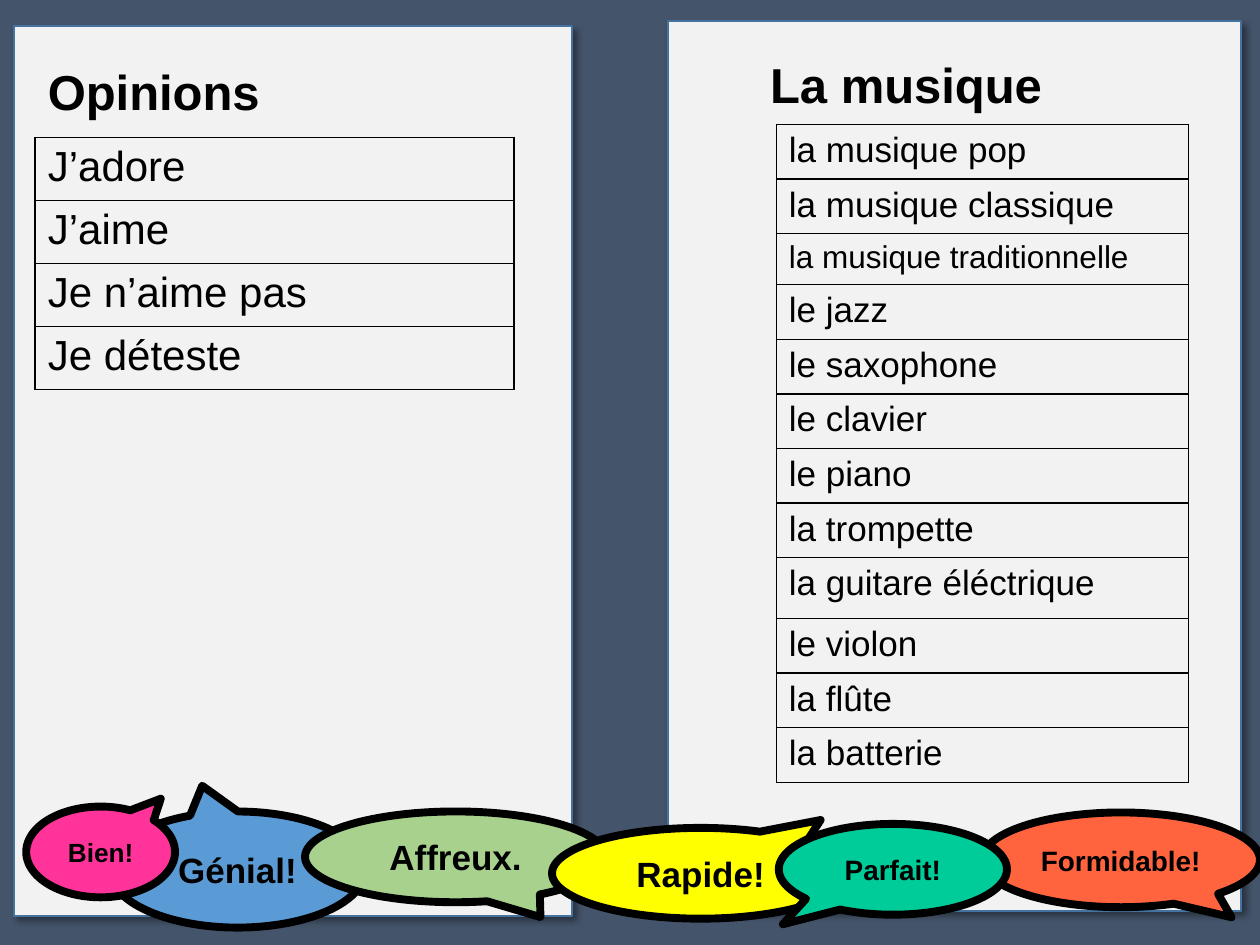
from lxml import etree
from pptx import Presentation
from pptx.dml.color import RGBColor
from pptx.enum.shapes import MSO_SHAPE
from pptx.enum.text import MSO_ANCHOR, MSO_AUTO_SIZE, PP_ALIGN
from pptx.oxml import parse_xml
from pptx.oxml.ns import nsdecls, qn
from pptx.util import Cm, Pt

RECTANGLE = MSO_SHAPE.RECTANGLE
CALLOUT = MSO_SHAPE.OVAL_CALLOUT
TOP, MIDDLE = MSO_ANCHOR.TOP, MSO_ANCHOR.MIDDLE
LEFT, CENTER = PP_ALIGN.LEFT, PP_ALIGN.CENTER
NO_AUTOFIT = MSO_AUTO_SIZE.NONE

FONT = "Arial"
COLORS = {
    "background": "44546A", "panel": "F2F2F2", "panel_line": "43739E",
    "ink": "000000", "blue": "5B9BD5", "pink": "FF3399", "green": "A9D18E",
    "yellow": "FFFF00", "orange": "FF643F", "teal": "00CC99",
}

PANELS = [(0.28, 0.53, 11.25, 17.93), (13.46, 0.43, 11.56, 17.93)]
HEADINGS = [
    (0, "Opinions", (0.71, 1.12, 10.82, 1.45)),
    (1, "La musique", (15.27, 0.97, 10.82, 1.45)),
]
OPINIONS = ["J’adore", "J’aime", "Je n’aime pas", "Je déteste"]
MUSIC = [
    "la musique pop", "la musique classique", "la musique traditionnelle",
    "le jazz", "le saxophone", "le clavier", "le piano", "la trompette",
    "la guitare éléctrique", "le violon", "la flûte", "la batterie",
]
TABLES = [
    {"words": OPINIONS, "place": (0.71, 2.77, 9.65), "row": 1.27, "size": 24,
     "exceptions": {}},
    {"words": MUSIC, "place": (15.65, 2.51, 8.31), "row": 1.1, "size": 20,
     "exceptions": {"la musique traditionnelle": (1.03, 18),
                    "la guitare éléctrique": (1.23, 20)}},
]
CALLOUTS = [
    ("Génial!", "blue", 20, (2.21, 16.36, 5.16, 2.34), (-0.138, -0.722)),
    ("Bien!", "pink", 15, (0.53, 16.26, 3.0, 1.83), (0.404, -0.587)),
    ("Affreux.", "green", 20, (6.15, 16.36, 6.07, 1.83), (0.282, 0.663)),
    ("Rapide!", "yellow", 20, (11.13, 16.69, 5.99, 1.83), (0.404, -0.587)),
    ("Formidable!", "orange", 16, (19.79, 16.38, 5.61, 1.91), (0.398, 0.606)),
    ("Parfait!", "teal", 16, (15.7, 16.61, 4.6, 1.83), (-0.482, 0.606)),
]


def color(name):
    return RGBColor.from_string(COLORS[name])


def write(frame, text, size, bold=False, align=LEFT, anchor=TOP):
    frame.text = text
    frame.word_wrap = True
    frame.vertical_anchor = anchor
    para = frame.paragraphs[0]
    para.alignment = align
    para.space_before = Pt(0)
    for span in para.runs:
        span.font.name = FONT
        span.font.size = Pt(size)
        span.font.bold = bold
        span.font.color.rgb = color("ink")


def add_box(page, kind, place, fill, line, width):
    box = page.shapes.add_shape(kind, *map(Cm, place))
    box.shadow.inherit = False
    box.fill.solid()
    box.fill.fore_color.rgb = color(fill)
    box.line.color.rgb = color(line)
    box.line.width = Pt(width)
    return box


def add_panel(page, place):
    panel = add_box(page, RECTANGLE, place, "panel", "panel_line", 1)
    effects = panel._element.spPr.find(qn("a:effectLst"))
    effects.append(parse_xml(
        f'<a:outerShdw {nsdecls("a")} blurRad="{Pt(4)}" dist="{Pt(3)}" '
        f'dir="2700000" algn="tl" rotWithShape="0">'
        f'<a:srgbClr val="{COLORS["ink"]}"><a:alpha val="40000"/></a:srgbClr>'
        f'</a:outerShdw>'))
    return panel


def add_borders(cell):
    properties = cell._tc.get_or_add_tcPr()
    for position, side in enumerate(("lnL", "lnR", "lnT", "lnB")):
        line = etree.Element(qn(f"a:{side}"), w=str(Pt(1)))
        fill = etree.SubElement(line, qn("a:solidFill"))
        etree.SubElement(fill, qn("a:srgbClr"), val=COLORS["ink"])
        properties.insert(position, line)


def add_word_table(page, words, place, row, size, exceptions):
    formats = [exceptions.get(word, (row, size)) for word in words]
    height = sum(row_height for row_height, _ in formats)
    table = page.shapes.add_table(len(words), 1, *map(Cm, (*place, height))).table
    table.first_row = False
    table.horz_banding = False
    for index, (word, (row_height, text_size)) in enumerate(zip(words, formats)):
        table.rows[index].height = Cm(row_height)
        cell = table.cell(index, 0)
        write(cell.text_frame, word, text_size)
        cell.fill.background()
        add_borders(cell)


def main():
    deck = Presentation()
    deck.slide_width, deck.slide_height = Cm(25.4), Cm(19.05)
    page = deck.slides.add_slide(deck.slide_layouts.get_by_name("Comparison"))
    page.background.fill.solid()
    page.background.fill.fore_color.rgb = color("background")

    headings = {number: (text, place) for number, text, place in HEADINGS}
    for holder in list(page.placeholders):
        number = holder.placeholder_format.idx
        if number not in headings:
            holder._element.getparent().remove(holder._element)
            continue
        text, place = headings[number]
        holder.left, holder.top, holder.width, holder.height = map(Cm, place)
        write(holder.text_frame, text, 28, bold=True)
        holder.text_frame.auto_size = NO_AUTOFIT

    first_heading = page.shapes.title._element
    for place in PANELS:
        first_heading.addprevious(add_panel(page, place)._element)

    for text, fill, size, place, tip in CALLOUTS:
        callout = add_box(page, CALLOUT, place, fill, "ink", 4.5)
        callout.adjustments[0], callout.adjustments[1] = tip
        write(callout.text_frame, text, size, True, CENTER, MIDDLE)

    for table in TABLES:
        add_word_table(page, **table)

    deck.save("out.pptx")


if __name__ == "__main__":
    main()
